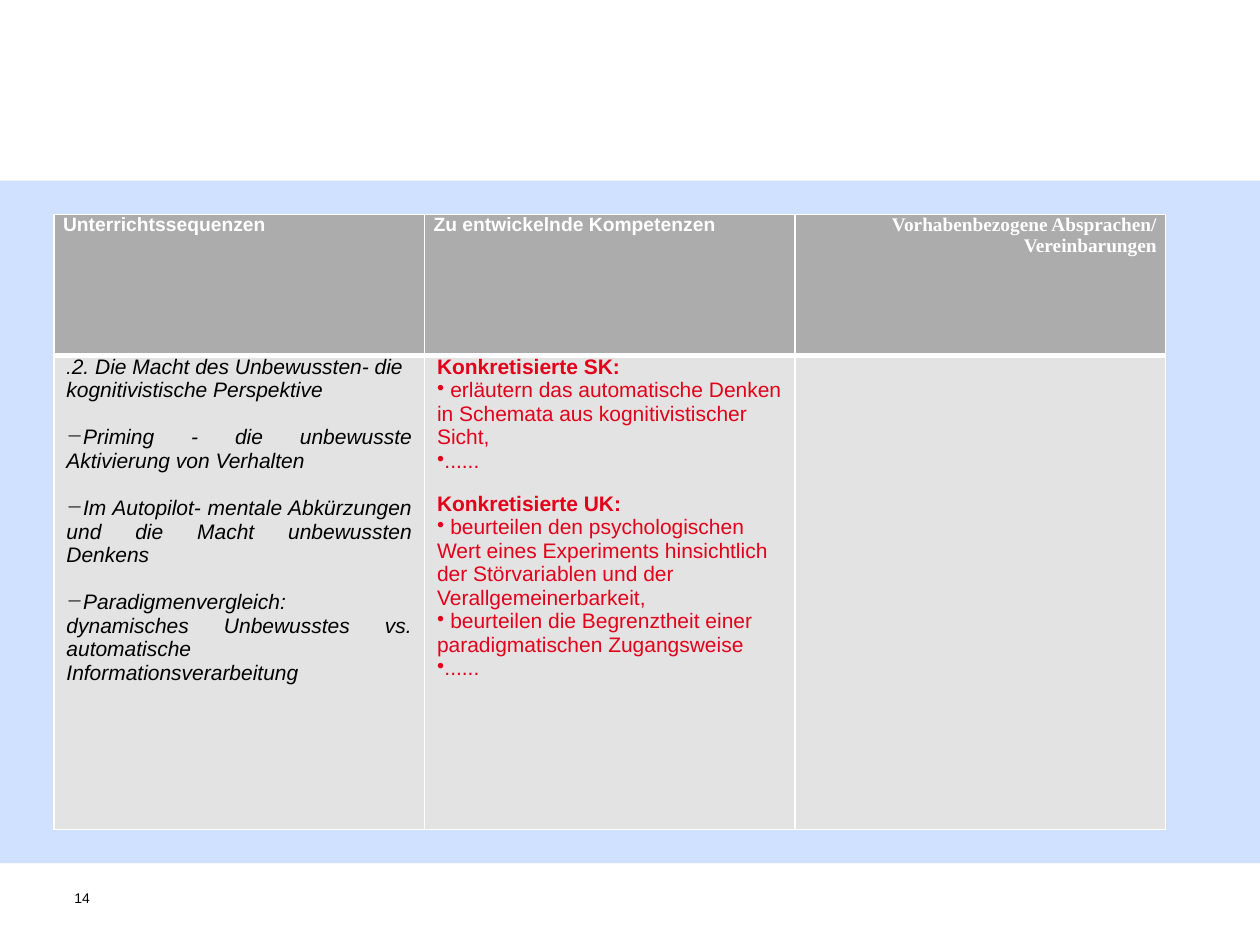
"""Build the slide with the table of lesson sequences and skills."""
from lxml import etree
from pptx import Presentation
from pptx.dml.color import RGBColor
from pptx.enum import shapes, text
from pptx.oxml import ns
from pptx.util import Cm, Pt

WHITE = RGBColor(0xFF, 0xFF, 0xFF)
BLACK = RGBColor(0, 0, 0)
BLUE = RGBColor(0x66, 0x99, 0xFF)
RED = RGBColor(0xE2, 0x00, 0x1A)
GREY = RGBColor(0xAC, 0xAC, 0xAC)
PALE = RGBColor(0xE3, 0xE3, 0xE3)
LEFT, RIGHT, FULL = text.PP_ALIGN.LEFT, text.PP_ALIGN.RIGHT, text.PP_ALIGN.JUSTIFY


def style(para, size, color, face="Arial", bold=False, slant=False):
    for run in para.runs:
        font = run.font
        font.name, font.size = face, Pt(size)
        font.bold, font.italic = bold, slant
        font.color.rgb = color


def border(cell, side, width):
    line = etree.SubElement(cell._tc.get_or_add_tcPr(), ns.qn("a:ln" + side), w=str(Pt(width)))
    fill = etree.SubElement(line, ns.qn("a:solidFill"))
    etree.SubElement(fill, ns.qn("a:srgbClr"), val=str(WHITE))


heads = [
    ("Unterrichtssequenzen", FULL, "Arial"),
    ("Zu entwickelnde Kompetenzen", FULL, "Arial"),
    ("Vorhabenbezogene Absprachen/ Vereinbarungen", RIGHT, "Times New Roman"),
]
topics = [
    (".", "", 0, LEFT, False),
    ("Priming - die unbewusste Aktivierung von Verhalten", "−", 13.5, FULL, False),
    ("Im Autopilot- mentale Abkürzungen und die Macht unbewussten Denkens", "−", 13.5, FULL, False),
    ("Paradigmenvergleich: dynamisches Unbewusstes vs. automatische "
     "Informationsverarbeitung", "−", 13.5, FULL, False),
]
skills = [
    ("Konkretisierte SK:", "", 0, LEFT, True),
    (" erläutern das automatische Denken in Schemata aus kognitivistischer Sicht,", "•", 0, LEFT, False),
    ("......", "•", 0, LEFT, False),
    ("Konkretisierte UK:", "", 11, LEFT, True),
    (" beurteilen den psychologischen Wert eines Experiments hinsichtlich der "
     "Störvariablen und der Verallgemeinerbarkeit,", "•", 0, LEFT, False),
    (" beurteilen die Begrenztheit einer paradigmatischen Zugangsweise", "•", 0, LEFT, False),
    ("......", "•", 0, LEFT, False),
]

deck = Presentation()
deck.slide_width, deck.slide_height = Cm(25.4), Cm(19.05)
slide = deck.slides.add_slide(deck.slide_layouts[6])

band = slide.shapes.add_shape(shapes.MSO_SHAPE.RECTANGLE, 0, Cm(3.64), Cm(25.4), Cm(13.76))
band.shadow.inherit = False
band.fill.solid()
band.fill.fore_color.rgb = BLUE
band.line.fill.background()
tint = band.fill._xPr.find(".//" + ns.qn("a:srgbClr"))
etree.SubElement(tint, ns.qn("a:alpha"), val="30000")

page = slide.shapes.add_textbox(Cm(1.5), Cm(17.93), Cm(0.81), Cm(0.94)).text_frame
page.word_wrap = True
page.margin_left = page.margin_right = page.margin_top = page.margin_bottom = 0
page.text = "14"
style(page.paragraphs[0], 8, BLACK)

table = slide.shapes.add_table(2, 3, Cm(1.09), Cm(4.32), Cm(22.41), Cm(12.4)).table
table.horz_banding = False
for col in table.columns:
    col.width = Cm(7.47)
for row, height, fill, pad, top, base in zip(
        table.rows, (2.84, 9.56), (GREY, PALE), (0.18, 0.25), (1, 3), (3, 1)):
    row.height = Cm(height)
    for cell in row.cells:
        for side, width in zip("LRTB", (1, 1, top, base)):
            border(cell, side, width)
        cell.fill.solid()
        cell.fill.fore_color.rgb = fill
        cell.margin_left = cell.margin_right = Cm(pad)
        cell.margin_top = cell.margin_bottom = 0

for cell, (words, align, face) in zip(table.rows[0].cells, heads):
    cell.text_frame.text = words
    para = cell.text_frame.paragraphs[0]
    para.alignment = align
    style(para, 11, WHITE, face, bold=True)

for col, (items, color, slant) in enumerate([(topics, BLACK, True), (skills, RED, False)]):
    frame = table.cell(1, col).text_frame
    for num, (words, mark, gap, align, bold) in enumerate(items):
        para = frame.add_paragraph() if num else frame.paragraphs[0]
        para.text = words
        if mark:
            etree.SubElement(para._p.get_or_add_pPr(), ns.qn("a:buChar"), char=mark)
        para.alignment = align
        if gap:
            para.space_before = Pt(gap)
        style(para, 12, color, bold=bold, slant=slant)

lead = table.cell(1, 0).text_frame.paragraphs[0]
lead.add_run().text = "2. Die Macht des Unbewussten- die kognitivistische Perspektive"
style(lead, 12, BLACK, slant=True)
lead.runs[0].font.size = Pt(11)

deck.save("out.pptx")
